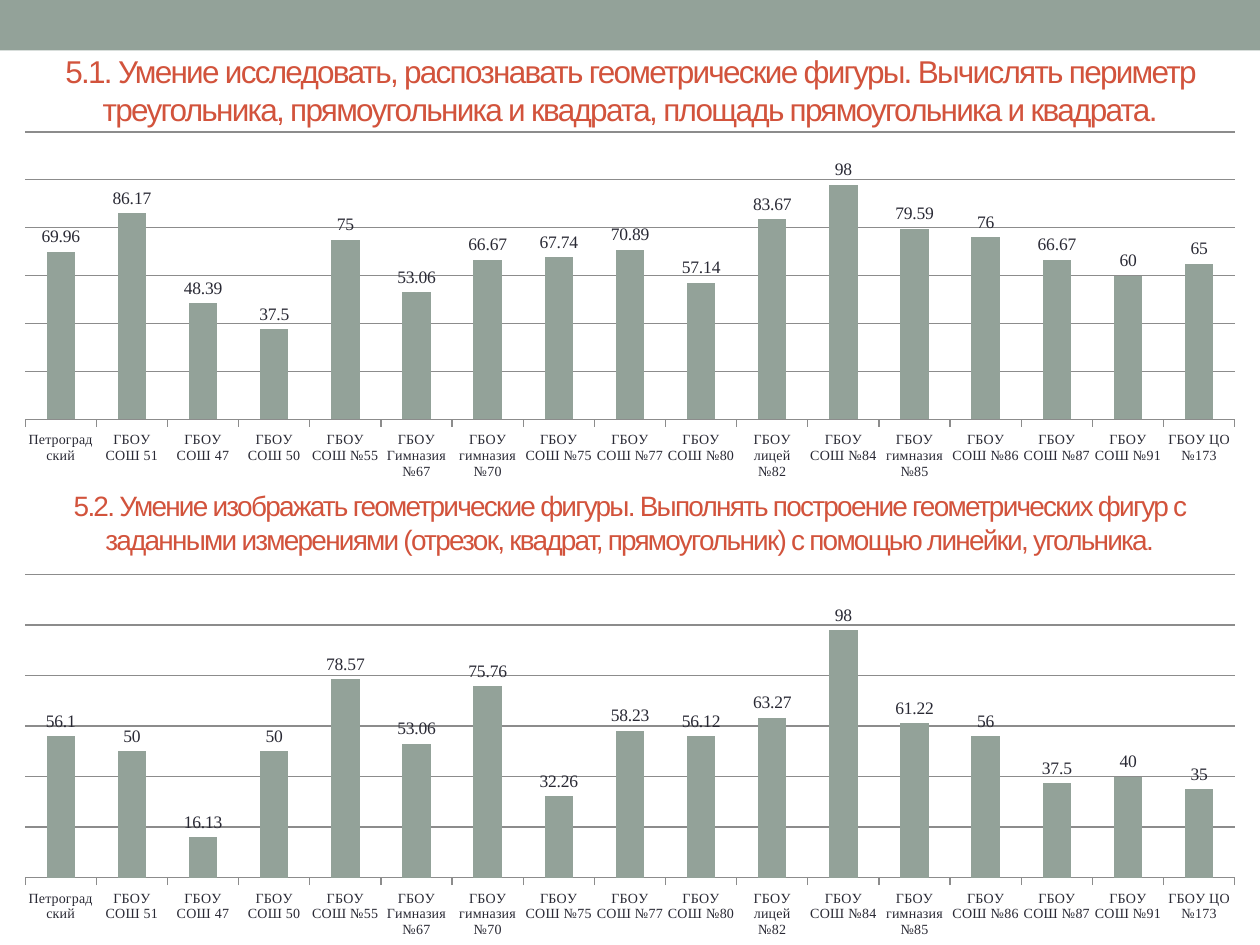
from pptx import Presentation
from pptx.chart.data import CategoryChartData
from pptx.dml.color import RGBColor
from pptx.enum.chart import XL_CHART_TYPE as ChartType, XL_LABEL_POSITION as LabelPos
from pptx.enum.chart import XL_TICK_MARK as Tick
from pptx.enum.shapes import MSO_SHAPE as Shape
from pptx.enum.text import MSO_ANCHOR as Anchor, MSO_AUTO_SIZE as AutoSize, PP_ALIGN as Align
from pptx.util import Inches, Pt

SAGE = RGBColor(0x93, 0xA2, 0x99)
RUST = RGBColor(0xD2, 0x53, 0x3C)
INK = RGBColor(0x29, 0x29, 0x34)
GREY = RGBColor(0x8C, 0x8C, 0x8C)

WIDTH, HEIGHT = Inches(10), Inches(7.5)
HEADING_H = Inches(0.55)

SCHOOLS = [
    "Петроградский", "ГБОУ СОШ 51", "ГБОУ СОШ 47", "ГБОУ СОШ 50", "ГБОУ СОШ №55",
    "ГБОУ Гимназия №67", "ГБОУ гимназия №70", "ГБОУ СОШ №75", "ГБОУ СОШ №77",
    "ГБОУ СОШ №80", "ГБОУ лицей №82", "ГБОУ СОШ №84", "ГБОУ гимназия №85",
    "ГБОУ СОШ №86", "ГБОУ СОШ №87", "ГБОУ СОШ №91", "ГБОУ ЦО №173",
]
RECOGNISE = [69.96, 86.17, 48.39, 37.5, 75, 53.06, 66.67, 67.74, 70.89,
             57.14, 83.67, 98, 79.59, 76, 66.67, 60, 65]
DRAW = [56.1, 50, 16.13, 50, 78.57, 53.06, 75.76, 32.26, 58.23,
        56.12, 63.27, 98, 61.22, 56, 37.5, 40, 35]


def add_band(s, height):
    """Coloured band along the top edge."""
    sp = s.shapes.add_shape(Shape.RECTANGLE, 0, 0, WIDTH, height)
    sp.shadow.inherit = False
    sp.fill.solid()
    sp.fill.fore_color.rgb = SAGE
    sp.line.fill.background()


def set_heading(sp, top, text, size):
    """Place and format a full-width heading."""
    sp.left, sp.top, sp.width, sp.height = 0, top, WIDTH, HEADING_H
    tf = sp.text_frame
    tf.word_wrap = True
    tf.auto_size = AutoSize.NONE
    tf.vertical_anchor = Anchor.MIDDLE
    p = tf.paragraphs[0]
    p.alignment = Align.CENTER
    p.font.name, p.font.size = "Arial", Pt(size)
    p.font.color.rgb = RUST
    r = p.add_run()
    r.text = text
    r.font._element.set("spc", "-100")  # tight letter spacing


def add_results(s, top, height, values):
    """Column chart of the results by school."""
    data = CategoryChartData()
    data.categories = SCHOOLS
    data.add_series("Series 1", values)
    chart = s.shapes.add_chart(ChartType.COLUMN_CLUSTERED, 0, top, WIDTH, height, data).chart
    chart.has_legend = chart.has_title = False
    chart.font.name, chart.font.size = "Times New Roman", Pt(10)
    chart.font.color.rgb = INK

    # Columns and their values
    plot = chart.plots[0]
    plot.gap_width = 150
    plot.vary_by_categories = False
    fill = plot.series[0].format.fill
    fill.solid()
    fill.fore_color.rgb = SAGE
    plot.has_data_labels = True
    labels = plot.data_labels
    labels.show_value = True
    labels.position = LabelPos.OUTSIDE_END

    # Axes
    schools, scores = chart.category_axis, chart.value_axis
    schools.tick_labels.font.size = Pt(8)
    schools.major_tick_mark = Tick.OUTSIDE
    scores.visible = False
    scores.minimum_scale, scores.maximum_scale, scores.major_unit = 0, 120, 20
    scores.has_major_gridlines = True
    for line in (schools.format.line, scores.major_gridlines.format.line):
        line.color.rgb = GREY
        line.width = Pt(0.75)


def main():
    prs = Presentation()
    prs.slide_width, prs.slide_height = WIDTH, HEIGHT
    s = prs.slides.add_slide(prs.slide_layouts[5])
    add_band(s, Inches(0.4))

    # 5.1 Recognising shapes
    set_heading(s.shapes.title, Inches(0.44),
                "5.1. Умение исследовать, распознавать геометрические фигуры. Вычислять периметр "
                "треугольника, прямоугольника и квадрата, площадь прямоугольника и квадрата.", 18)
    add_results(s, Inches(0.99), Inches(2.87), RECOGNISE)

    # 5.2 Drawing shapes
    set_heading(s.shapes.add_textbox(0, 0, WIDTH, HEADING_H), Inches(3.87),
                "5.2. Умение изображать геометрические фигуры. Выполнять построение геометрических "
                "фигур с заданными измерениями (отрезок, квадрат, прямоугольник) с помощью линейки, "
                "угольника.", 16)
    add_results(s, Inches(4.5), Inches(3), DRAW)

    prs.save("out.pptx")


if __name__ == "__main__":
    main()
